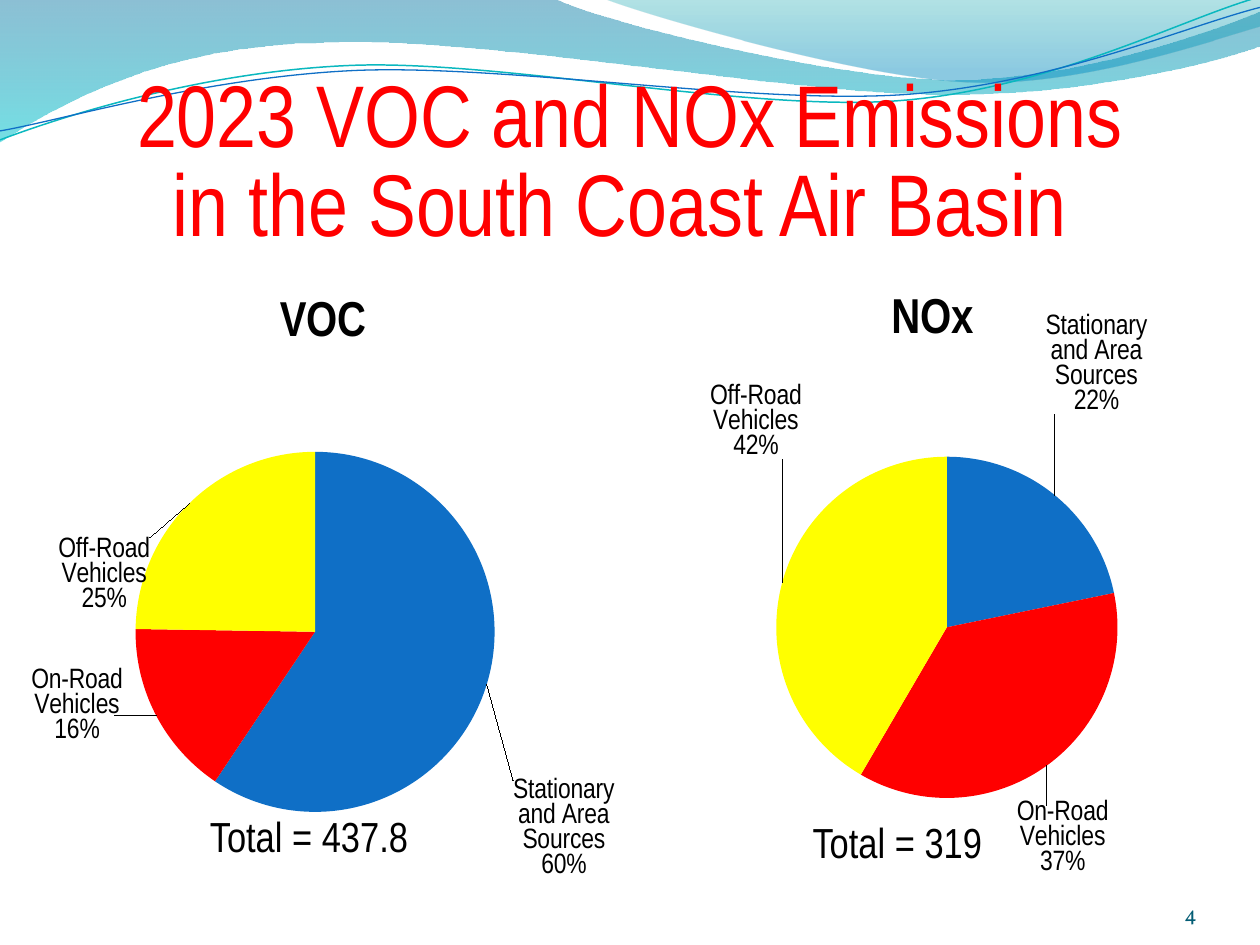
import math
from lxml import etree
from pptx import Presentation, util as u
from pptx.chart.data import CategoryChartData
from pptx.dml.color import RGBColor
from pptx.enum import chart as ch, text as tx
from pptx.oxml import parse_xml
from pptx.oxml.ns import qn

FONT = "Arial Narrow"
CATS = ["Stationary and Area Sources", "On-Road Vehicles", "Off-Road Vehicles"]
HUES = ["0F6FC6", "FF0000", "FFFF00"]


def rgb(hue):
    return RGBColor.from_string(hue)


def style(font, size, hue="000000", name=FONT, bold=False):
    font.size, font.name, font.bold = u.Pt(size), name, bold
    font.color.rgb = rgb(hue)


def outline(slide, start, parts, close):
    """Draw lines (1 point) and cubic curves (3 points) as one freeform."""
    dots = [(u.Cm(x), u.Cm(y)) for part in parts for x, y in part]
    pen = slide.shapes.build_freeform(*map(u.Cm, start))
    pen.add_line_segments(dots, close=close)
    shape = pen.convert_to_shape()
    shape.shadow.inherit = False
    steps = iter(list(shape._element.iter(qn("a:lnTo"))))
    for part in parts:
        group = [next(steps) for _ in part]
        if len(group) == 3:
            curve = etree.Element(qn("a:cubicBezTo"))
            group[0].addprevious(curve)
            for step in group:
                curve.append(step[0])
                step.getparent().remove(step)
    return shape


def wave(slide, stops, start, parts):
    """Fill a wave from top to bottom; a stop is (position, hue, opacity %)."""
    shape = outline(slide, start, parts, True)
    shape.line.fill.background()
    shape.fill.gradient()
    shape.fill.gradient_angle = 270
    for stop, (place, hue, _) in zip(shape.fill.gradient_stops, stops):
        stop.position = place
        stop.color.rgb = rgb(hue)
    clrs = shape._element.spPr.find(qn("a:gradFill")).iter(qn("a:srgbClr"))
    for clr, stop in zip(clrs, stops):
        etree.SubElement(clr, qn("a:alpha"), val=str(stop[2] * 1000))


def strand(slide, hue, width, hub, start, parts, turn=-2.7):
    """Draw a curve level, then turn it about its hub onto its points."""
    c, s = math.cos(math.radians(turn)), math.sin(math.radians(turn))

    def level(dot):
        x, y = dot[0] - hub[0], dot[1] - hub[1]
        return hub[0] + c * x + s * y, hub[1] - s * x + c * y

    shape = outline(slide, level(start),
                    [[level(dot) for dot in part] for part in parts], False)
    shape.rotation = turn
    shape.fill.background()
    shape.line.color.rgb = rgb(hue)
    shape.line.width = u.Pt(width)


def header(slide):
    wave(slide, [(0, "0074A1", 45), (1, "00C6CF", 55)], (0, -0.03), [
        [(11.18, -0.03)],
        [(12.09, 0.43), (16.87, 1.6), (19.25, 1.6)],
        [(21.67, 1.6), (24.33, 0.66), (25.4, 0.23)],
        [(25.43, 0.91)],
        [(24.97, 1.12), (22.1, 1.93), (18.95, 1.9)],
        [(15.8, 1.9), (9.7, 0.71), (6.53, 0.86)],
        [(3.28, 0.89), (1.17, 2.11), (-0.03, 2.87)]])
    wave(slide, [(0, "00A1A9", 30), (0.8, "008BBF", 45)], (12.17, -0.03), [
        [(12.93, 0.28), (17.32, 1.57), (19.53, 1.65)],
        [(21.74, 1.75), (24.41, 0.81), (25.4, 0.53)],
        [(25.4, 0)]])
    strand(slide, "0AB8BF", 0.85, (12.67, 1.46), (0, 2.82), [
        [(1.22, 2.36), (4.01, 1.45), (7.04, 1.32)],
        [(10.03, 1.19), (15.06, 2.26), (18.11, 2.03)],
        [(21.16, 1.8), (23.83, 0.38), (25.35, -0.05)]])
    strand(slide, "0F6FC6", 0.75, (12.69, 1.5), (0, 2.64), [
        [(1.19, 2.44), (4.17, 1.55), (7.19, 1.42)],
        [(10.24, 1.3), (15.16, 2.11), (18.21, 1.91)],
        [(21.23, 1.7), (23.9, 0.53), (25.4, 0.15)]])


def label(slide, box, words, size, hue="000000", name=FONT, align=None,
          pads=(0.25, 0.13, 0.25, 0.13), wrap=True, base=False, gap=None):
    frame = slide.shapes.add_textbox(*map(u.Cm, box)).text_frame
    frame.word_wrap = wrap
    (frame.margin_left, frame.margin_top,
     frame.margin_right, frame.margin_bottom) = map(u.Cm, pads)
    if base:
        frame.vertical_anchor = tx.MSO_ANCHOR.BOTTOM
    para = frame.paragraphs[0]
    para.text = words
    para.alignment = align
    para.line_spacing = gap
    style(para.font, size, hue, name)


def layout(target=None, **marks):
    """XML of a manual layout; target makes it the inner plot area."""
    head = ""
    if target:
        head = (f'<c:layoutTarget val="{target}"/>'
                '<c:xMode val="edge"/><c:yMode val="edge"/>')
    body = "".join(f'<c:{k} val="{v:.4f}"/>' for k, v in marks.items())
    return f"<c:layout><c:manualLayout>{head}{body}</c:manualLayout></c:layout>"


def look(share=True):
    """XML of a label: category and share, or category and value as percent."""
    code = "0%" if share else "0&quot;%&quot;"
    return (
        f'<c:numFmt formatCode="{code}" sourceLinked="0"/>'
        '<c:spPr><a:noFill/><a:ln><a:noFill/></a:ln></c:spPr>'
        '<c:txPr><a:bodyPr/><a:p><a:pPr><a:defRPr sz="1600" b="0">'
        '<a:solidFill><a:srgbClr val="000000"/></a:solidFill>'
        f'<a:latin typeface="{FONT}"/></a:defRPr></a:pPr></a:p></c:txPr>'
        '<c:dLblPos val="outEnd"/><c:showLegendKey val="0"/>'
        f'<c:showVal val="{int(not share)}"/><c:showCatName val="1"/>'
        f'<c:showSerName val="0"/><c:showPercent val="{int(share)}"/>'
        '<c:showBubbleSize val="0"/><c:separator>\n</c:separator>')


def tags(vals, shifts, wide, high):
    """XML of the slice labels, each moved by (x, y) from its slice.

    A value that its rounded share misses is shown itself."""
    each = "".join(
        f'<c:dLbl><c:idx val="{i}"/>{layout(x=x / wide, y=y / high)}'
        f'{look(round(100 * val / sum(vals)) == val)}</c:dLbl>'
        for i, (val, (x, y)) in enumerate(zip(vals, shifts)))
    return each + look() + '<c:showLeaderLines val="1"/>'


def node(name, body):
    return parse_xml(
        f'<c:{name} xmlns:c="http://schemas.openxmlformats.org/drawingml/2006/chart"'
        ' xmlns:a="http://schemas.openxmlformats.org/drawingml/2006/main">'
        f'{body}</c:{name}>')


def pie(slide, box, name, vals, disc, shifts):
    """disc is the pie's centre and radius, in cm inside the box."""
    data = CategoryChartData(number_format="0")
    data.categories = CATS
    data.add_series(name, vals)
    chart = slide.shapes.add_chart(
        ch.XL_CHART_TYPE.PIE, *map(u.Cm, box), data).chart
    style(chart.font, 18, name="Vollkorn")
    chart.has_legend = False
    chart.has_title = True
    head = chart.chart_title.text_frame
    head.text = name
    style(head.paragraphs[0].font, 28, bold=True)
    plot = chart.plots[0]
    plot.vary_by_categories = True
    series = plot.series[0]
    for i, hue in enumerate(HUES):
        fill = series.points[i].format.fill
        fill.solid()
        fill.fore_color.rgb = rgb(hue)
    _, _, wide, high = box
    x, y, r = disc
    series._element.find(qn("c:cat")).addprevious(
        node("dLbls", tags(vals, shifts, wide, high)))
    area = chart._chartSpace.find(qn("c:chart")).find(qn("c:plotArea"))
    for old in area.findall(qn("c:layout")):
        area.remove(old)
    area.insert(0, node("plotArea", layout(
        "inner", x=(x - r) / wide, y=(y - r) / high,
        w=2 * r / wide, h=2 * r / high))[0])


def main():
    deck = Presentation()
    deck.slide_width, deck.slide_height = u.Cm(25.4), u.Cm(19.05)
    slide = deck.slides.add_slide(deck.slide_layouts[6])
    header(slide)
    label(slide, (0, 1.95, 25.4, 3.18),
          "2023 VOC and NOx Emissions\vin the South Coast Air Basin ",
          50, "FF0000", align=tx.PP_ALIGN.CENTER, pads=(0, 0.13, 0, 0),
          base=True, gap=0.85)
    pie(slide, (12.9, 5.33, 11.79, 12.32), "NOx", (22, 37, 42),
        (6.19, 7.32, 3.44), [(-0.28, -1.51), (-0.68, 0.67), (0.54, -2.44)])
    label(slide, (22.02, 17.65, 2.11, 1.02), "4", 12, "045D75", "Vollkorn",
          tx.PP_ALIGN.RIGHT, (0, 0, 0, 0), base=True)
    pie(slide, (0.63, 5.4, 11.79, 12.32), "VOC", (60, 16, 25),
        (5.74, 7.34, 3.63), [(0.39, 1.9), (-0.71, -1.01), (-0.69, 2.3)])
    label(slide, (3.98, 16.21, 4.57, 1.27), "Total = 437.8", 24, wrap=False)
    label(slide, (16.13, 16.33, 3.99, 1.27), "Total = 319", 24, wrap=False)
    deck.save("out.pptx")


if __name__ == "__main__":
    main()
